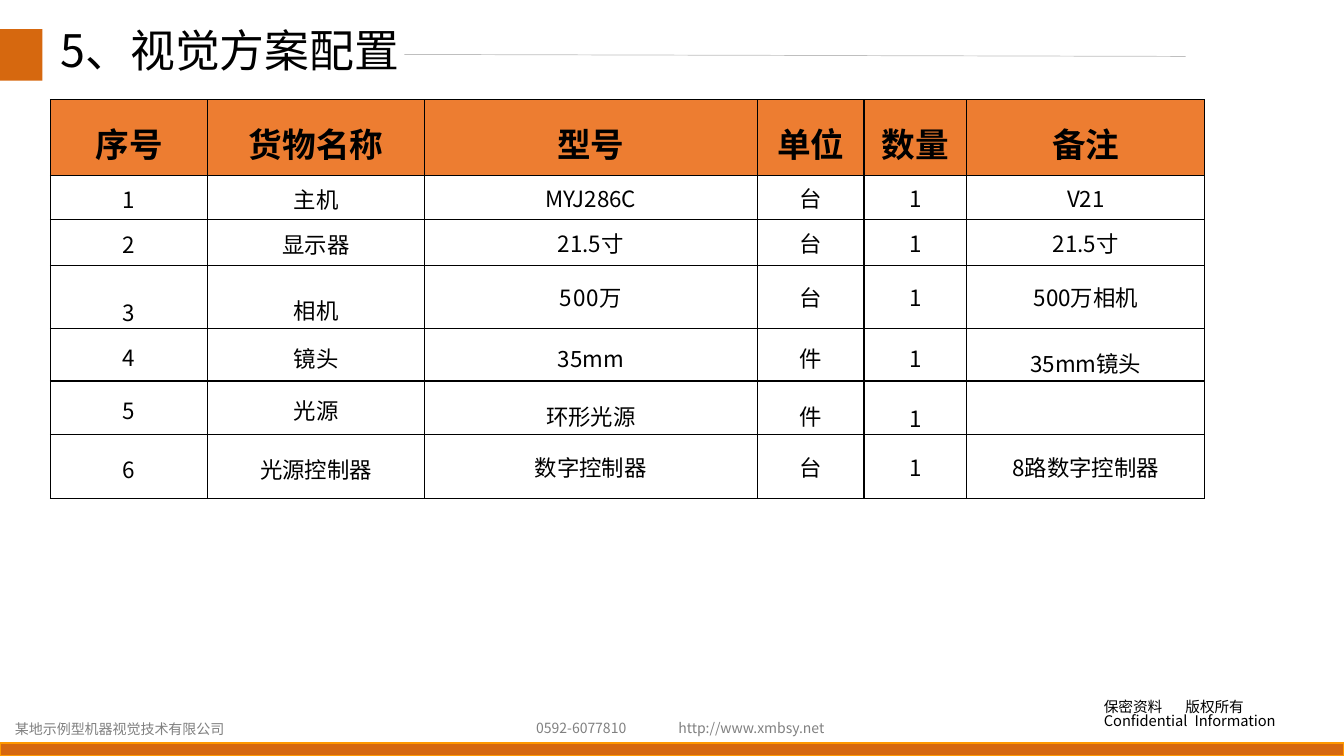
from dataclasses import dataclass

from lxml.etree import SubElement
from pptx import Presentation
from pptx.dml.color import RGBColor
from pptx.enum.shapes import MSO_CONNECTOR as CONN, MSO_SHAPE as SHAPE
from pptx.enum.text import MSO_ANCHOR as ANCHOR, MSO_AUTO_SIZE as AUTO, PP_ALIGN as ALIGN
from pptx.oxml.ns import qn
from pptx.util import Inches, Pt

FONT = "Noto Sans CJK SC"
BLACK = RGBColor(0x00, 0x00, 0x00)
WHITE = RGBColor(0xFF, 0xFF, 0xFF)
GRAY = RGBColor(0x80, 0x80, 0x80)
SILVER = RGBColor(0xBF, 0xBF, 0xBF)
RUST = RGBColor(0xD6, 0x68, 0x0F)
AMBER = RGBColor(0xFF, 0x99, 0x00)
ORANGE = RGBColor(0xED, 0x7D, 0x31)


@dataclass
class Bar:
    left: float
    top: float
    width: float
    height: float
    line: RGBColor | None = None


@dataclass
class Label:
    lines: list[str]
    left: float
    top: float
    width: float
    height: float
    size: float = 10
    color: RGBColor = GRAY
    spacing: float = 1.0
    tabs: tuple[float, ...] = ()


@dataclass
class Row:
    height: float
    texts: list[str]
    spacings: list[float]
    size: int = 16
    bold: bool = False
    fill: RGBColor = WHITE


BARS = [Bar(0, 0.29, 0.42, 0.51), Bar(0, 7.37, 13.33, 0.13, AMBER)]

LABELS = [
    Label(["保密资料\t版权所有", "Confidential\tInformation"], 10.85, 6.9, 2.17, 0.45,
          10.5, BLACK, 0.83, (0.81, 0.9)),
    Label(["http://www.xmbsy.net"], 6.63, 7.09, 1.67, 0.27),
    Label(["0592-6077810"], 5.22, 7.09, 1.2, 0.27),
    Label(["某地示例型机器视觉技术有限公司"], 0.05, 7.1, 2.35, 0.27),
]

COLUMNS = [1.56, 2.15, 3.3, 1.06, 1.02, 2.36]
PLAIN = [1.1, 1.1, 1, 1, 1, 1]
ROWS = [
    Row(0.75, ["序号", "货物名称", "型号", "单位", "数量", "备注"], [1.2] * 6, 24, True, ORANGE),
    Row(0.44, ["1", "主机", "MYJ286C", "台", "1", "V21"], PLAIN),
    Row(0.45, ["2", "显示器", "21.5寸", "台", "1", "21.5寸"], PLAIN),
    Row(0.63, ["3", "相机", "500万", "台", "1", "500万相机"], [1.9, 1.8, 1, 1, 1, 1]),
    Row(0.52, ["4", "镜头", "35mm", "件", "1", "35mm镜头"], [1.1, 1.2, 1.2, 1.2, 1.2, 1.5]),
    Row(0.53, ["5", "光源", "环形光源", "件", "1", ""], [1.1, 1.1, 1.5, 1.5, 1.6, 1]),
    Row(0.64, ["6", "光源控制器", "数字控制器", "台", "1", "8路数字控制器"], PLAIN),
]


def format_paragraph(p, size: float, color: RGBColor, spacing: float = 1.0, bold: bool = False) -> None:
    p.line_spacing = spacing
    for r in p.runs:
        r.font.name = FONT
        r.font.size = Pt(size)
        r.font.bold = bold
        r.font.color.rgb = color
        SubElement(r.font._element, qn("a:ea"), typeface=FONT)


def add_bar(slide, bar: Bar) -> None:
    sp = slide.shapes.add_shape(SHAPE.RECTANGLE, Inches(bar.left), Inches(bar.top),
                                Inches(bar.width), Inches(bar.height))
    sp.shadow.inherit = False
    sp.fill.solid()
    sp.fill.fore_color.rgb = RUST
    if bar.line is None:
        sp.line.fill.background()
    else:
        sp.line.color.rgb = bar.line
        sp.line.width = Pt(1)


def add_label(slide, label: Label) -> None:
    sp = slide.shapes.add_textbox(Inches(label.left), Inches(label.top),
                                  Inches(label.width), Inches(label.height))
    tf = sp.text_frame
    tf.word_wrap = True
    tf.text = "\n".join(label.lines)
    for p in tf.paragraphs:
        format_paragraph(p, label.size, label.color, label.spacing)
    for p, stop in zip(tf.paragraphs, label.tabs):
        tabs = SubElement(p._p.get_or_add_pPr(), qn("a:tabLst"))
        SubElement(tabs, qn("a:tab"), pos=str(Inches(stop)), algn="l")


def add_title(slide, text: str) -> None:
    sp = slide.shapes.title
    sp.left, sp.top, sp.width, sp.height = Inches(0.5), Inches(0.29), Inches(3.83), Inches(0.71)
    tf = sp.text_frame
    tf.text = text
    tf.word_wrap = True
    tf.auto_size = AUTO.NONE
    tf.vertical_anchor = ANCHOR.TOP
    tf.margin_top = 0
    p = tf.paragraphs[0]
    p.alignment = ALIGN.LEFT
    format_paragraph(p, 32, BLACK, 0.9)


def add_rule(slide) -> None:
    line = slide.shapes.add_connector(CONN.STRAIGHT, Inches(4.01), Inches(0.54),
                                      Inches(11.76), Inches(0.56))
    line.line.color.rgb = SILVER
    line.line.width = Pt(0.5)
    SubElement(line._element.spPr, qn("a:effectLst"))


def add_borders(cell) -> None:
    tc_pr = cell._tc.get_or_add_tcPr()
    for i, side in enumerate(("lnL", "lnR", "lnT", "lnB")):
        ln = SubElement(tc_pr, qn(f"a:{side}"), w=str(Pt(1)))
        fill = SubElement(ln, qn("a:solidFill"))
        SubElement(fill, qn("a:srgbClr"), val=str(BLACK))
        tc_pr.insert(i, ln)


def add_parts_table(slide) -> None:
    frame = slide.shapes.add_table(len(ROWS), len(COLUMNS), Inches(0.5), Inches(0.99),
                                   Inches(sum(COLUMNS)), Inches(sum(row.height for row in ROWS)))
    table = frame.table
    table.horz_banding = False
    for column, width in zip(table.columns, COLUMNS):
        column.width = Inches(width)
    for i, row in enumerate(ROWS):
        table.rows[i].height = Inches(row.height)
        for j, (text, spacing) in enumerate(zip(row.texts, row.spacings)):
            cell = table.cell(i, j)
            cell.fill.solid()
            cell.fill.fore_color.rgb = row.fill
            add_borders(cell)
            cell.vertical_anchor = ANCHOR.MIDDLE
            cell.margin_top = cell.margin_bottom = 0
            p = cell.text_frame.paragraphs[0]
            p.text = text
            p.alignment = ALIGN.CENTER
            format_paragraph(p, row.size, BLACK, spacing, row.bold)
            if text == "500万":
                p.runs[0].font._element.set("spc", "50")


def main() -> None:
    prs = Presentation()
    prs.slide_width, prs.slide_height = Inches(13.33), Inches(7.5)
    slide = prs.slides.add_slide(prs.slide_layouts[5])
    for bar in BARS:
        add_bar(slide, bar)
    for label in LABELS:
        add_label(slide, label)
    add_rule(slide)
    add_title(slide, "5、视觉方案配置")
    add_parts_table(slide)
    prs.save("out.pptx")


if __name__ == "__main__":
    main()
